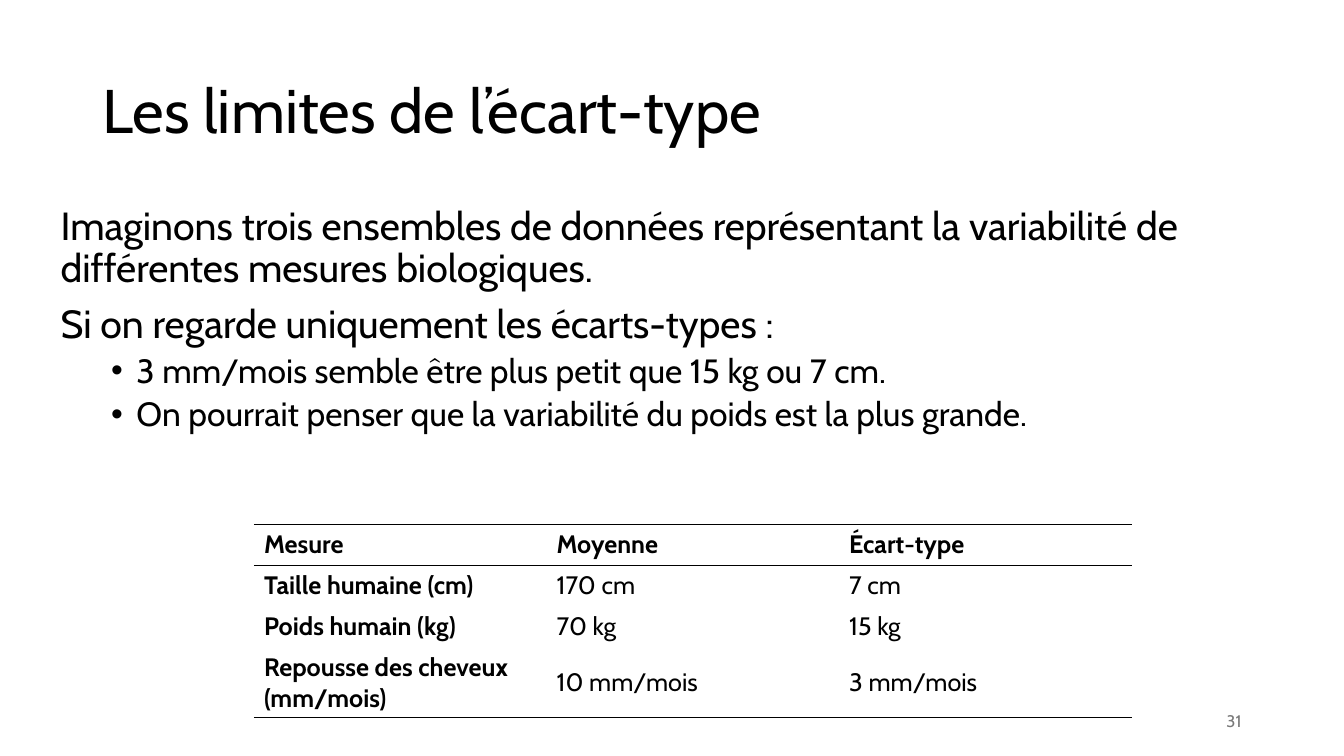
from dataclasses import dataclass

from lxml.etree import SubElement
from pptx import Presentation
from pptx.dml.color import RGBColor
from pptx.enum.text import MSO_ANCHOR as Anchor, PP_ALIGN as Align
from pptx.oxml.ns import qn
from pptx.util import Cm, Pt


@dataclass(frozen=True)
class Theme:
    font: str = "Cabin"
    ink: str = "000000"
    muted: str = "797979"
    title: int = 44
    body: int = 28
    bullet: int = 24
    cell: int = 18
    number: int = 12
    rule: int = 1
    table_style: str = "{2D5ABB26-0587-4C30-8999-92F81FD0307C}"


@dataclass(frozen=True)
class Box:
    left: float
    top: float
    width: float
    height: float

    def lengths(self):
        return Cm(self.left), Cm(self.top), Cm(self.width), Cm(self.height)


THEME = Theme()
TITLE = "Les limites de l’écart-type"
BODY = [
    (0, "Imaginons trois ensembles de données représentant la variabilité de différentes mesures biologiques."),
    (0, "Si on regarde uniquement les écarts-types :"),
    (1, "3 mm/mois semble être plus petit que 15 kg ou 7 cm."),
    (1, "On pourrait penser que la variabilité du poids est la plus grande."),
]
MEASURES = [
    ("Mesure", "Moyenne", "Écart-type"),
    ("Taille humaine (cm)", "170 cm", "7 cm"),
    ("Poids humain (kg)", "70 kg", "15 kg"),
    ("Repousse des cheveux (mm/mois)", "10 mm/mois", "3 mm/mois"),
]


def style_text(para, size, color=THEME.ink, bold=False):
    for span in para.runs:
        span.font.name = THEME.font
        span.font.size = Pt(size)
        span.font.bold = bold
        span.font.color.rgb = RGBColor.from_string(color)


def add_text_frame(page, box, anchor):
    frame = page.shapes.add_textbox(*box.lengths()).text_frame
    frame.word_wrap = True
    frame.vertical_anchor = anchor
    return frame


def add_title(page, box):
    para = add_text_frame(page, box, Anchor.MIDDLE).paragraphs[0]
    para.text = TITLE
    para.line_spacing = 0.9
    style_text(para, THEME.title)


def add_bullet(para):
    props = para._p.get_or_add_pPr()
    props.set("marL", str(Cm(1.91)))
    props.set("indent", str(-Cm(0.64)))
    SubElement(props, qn("a:buFont"), typeface="Arial")
    SubElement(props, qn("a:buChar"), char="•")


def add_body(page, box):
    frame = add_text_frame(page, box, Anchor.TOP)
    frame.text = "\n".join(text for _, text in BODY)
    for para, (level, _) in zip(frame.paragraphs, BODY):
        para.level = level
        para.line_spacing = 0.9
        para.space_before = Pt(5 if level else 10)
        if level:
            add_bullet(para)
        style_text(para, THEME.bullet if level else THEME.body)


def add_border(cell, side):
    props = cell._tc.get_or_add_tcPr()
    line = SubElement(props, qn(f"a:{side}"), w=str(Pt(THEME.rule)))
    fill = SubElement(line, qn("a:solidFill"))
    SubElement(fill, qn("a:srgbClr"), val=THEME.ink)


def add_measures(page, box):
    last = len(MEASURES) - 1
    columns = len(MEASURES[0])
    table = page.shapes.add_table(len(MEASURES), columns, *box.lengths()).table
    table.horz_banding = False
    table._tbl.tblPr.find(qn("a:tableStyleId")).text = THEME.table_style
    row_height = 1.03
    for column in table.columns:
        column.width = Cm(box.width / columns)
    for r, values in enumerate(MEASURES):
        table.rows[r].height = Cm(box.height - last * row_height if r == last else row_height)
        for c, value in enumerate(values):
            cell = table.cell(r, c)
            cell.text = value
            cell.vertical_anchor = Anchor.MIDDLE
            style_text(cell.text_frame.paragraphs[0], THEME.cell, bold=r == 0 or c == 0)
            if r == 0:
                add_border(cell, "lnT")
            if r in (0, last):
                add_border(cell, "lnB")
            cell.fill.background()


def add_number(page, box):
    para = add_text_frame(page, box, Anchor.MIDDLE).paragraphs[0]
    para.text = "31"
    para.alignment = Align.RIGHT
    style_text(para, THEME.number, THEME.muted)


def main():
    deck = Presentation()
    deck.slide_width, deck.slide_height = Cm(33.87), Cm(19.05)
    page = deck.slides.add_slide(deck.slide_layouts[6])
    add_title(page, Box(2.33, 1.01, 29.21, 3.68))
    add_body(page, Box(1.28, 5.07, 30.27, 12.09))
    add_number(page, Box(23.92, 17.66, 7.62, 1.01))
    add_measures(page, Box(6.4, 13.21, 22.12, 4.88))
    deck.save("out.pptx")


if __name__ == "__main__":
    main()
